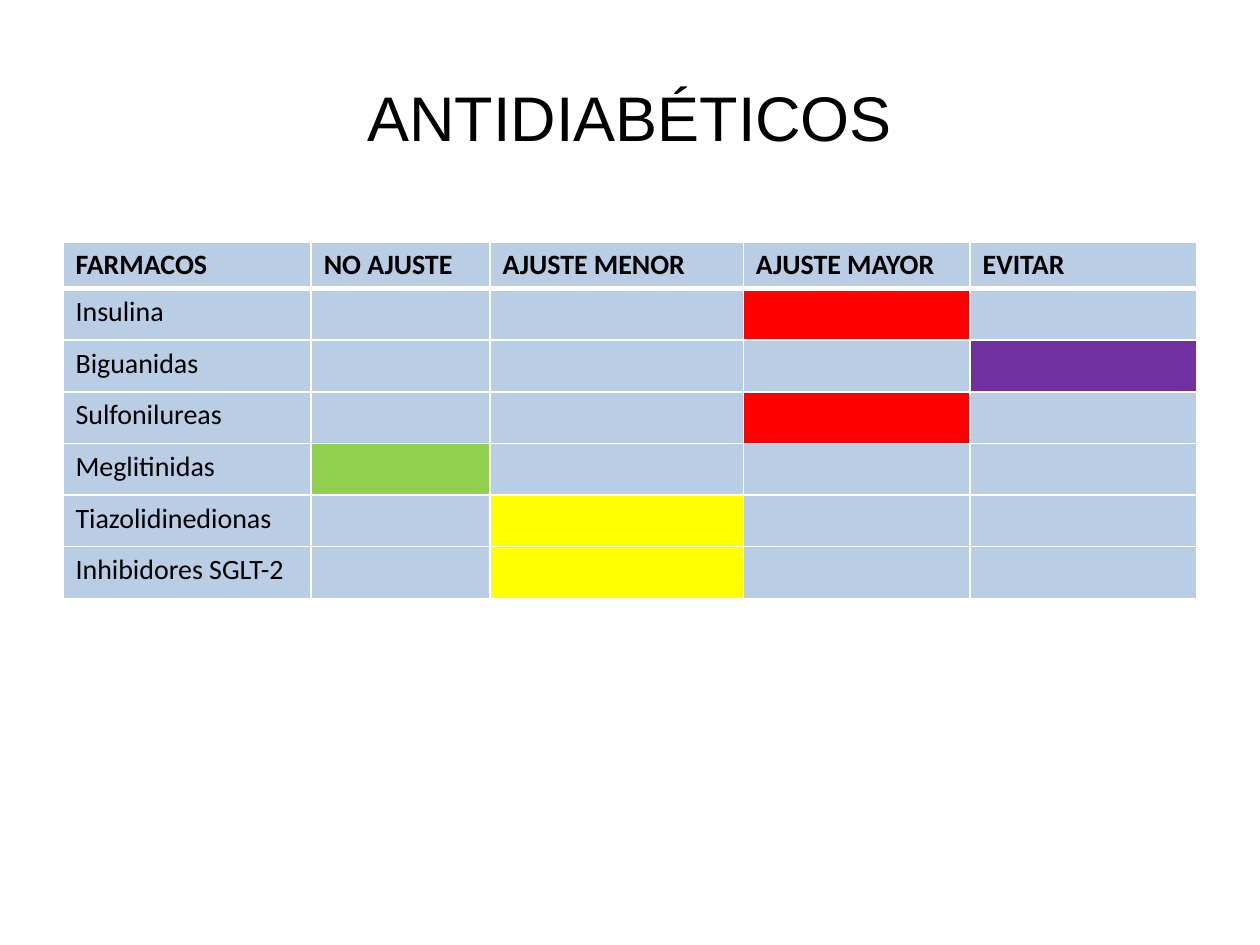
from lxml.etree import SubElement
from pptx import Presentation
from pptx.dml.color import RGBColor
from pptx.enum.text import MSO_ANCHOR, PP_ALIGN
from pptx.oxml.ns import qn
from pptx.util import Inches, Pt

BLACK = RGBColor(0x00, 0x00, 0x00)
WHITE = RGBColor(0xFF, 0xFF, 0xFF)
PALE_BLUE = RGBColor(0xB9, 0xCD, 0xE5)
GREEN = RGBColor(0x92, 0xD0, 0x50)
YELLOW = RGBColor(0xFF, 0xFF, 0x00)
RED = RGBColor(0xFF, 0x00, 0x00)
PURPLE = RGBColor(0x70, 0x30, 0xA0)

ADJUSTMENTS = {
    "NO AJUSTE": GREEN,
    "AJUSTE MENOR": YELLOW,
    "AJUSTE MAYOR": RED,
    "EVITAR": PURPLE,
}
DRUGS = {
    "Insulina": "AJUSTE MAYOR",
    "Biguanidas": "EVITAR",
    "Sulfonilureas": "AJUSTE MAYOR",
    "Meglitinidas": "NO AJUSTE",
    "Tiazolidinedionas": "AJUSTE MENOR",
    "Inhibidores SGLT-2": "AJUSTE MENOR",
}
COLUMN_WIDTHS = [1.97, 1.42, 2.01, 1.8, 1.8]
HEADER_HEIGHT, DRUG_HEIGHT = 0.37, 0.41


def add_run(paragraph, text, font_name, size, bold=False):
    run = paragraph.add_run()
    run.text = text
    run.font.name = font_name
    run.font.size = Pt(size)
    run.font.bold = bold
    run.font.color.rgb = BLACK


def add_title(slide, box, text):
    frame = slide.shapes.add_textbox(*box).text_frame
    frame.word_wrap = True
    frame.vertical_anchor = MSO_ANCHOR.MIDDLE
    heading = frame.paragraphs[0]
    heading.alignment = PP_ALIGN.CENTER
    add_run(heading, text, "Arial", 36)


def set_borders(cell, widths):
    properties = cell._tc.get_or_add_tcPr()
    for side, width in widths.items():
        line = SubElement(properties, qn(f"a:ln{side}"), w=str(Pt(width)))
        fill = SubElement(line, qn("a:solidFill"))
        SubElement(fill, qn("a:srgbClr"), val=str(WHITE))


def style_cell(cell, text, color, top, bottom, bold):
    set_borders(cell, {"L": 1, "R": 1, "T": top, "B": bottom})
    cell.fill.solid()
    cell.fill.fore_color.rgb = color
    if text:
        add_run(cell.text_frame.paragraphs[0], text, "Calibri", 16, bold)


def add_adjustment_table(slide, box):
    grid = slide.shapes.add_table(len(DRUGS) + 1, len(COLUMN_WIDTHS), *box).table
    for column, width in zip(grid.columns, COLUMN_WIDTHS):
        column.width = Inches(width)
    for index, row in enumerate(grid.rows):
        row.height = Inches(DRUG_HEIGHT if index else HEADER_HEIGHT)

    for column, heading in enumerate(["FARMACOS", *ADJUSTMENTS]):
        style_cell(grid.cell(0, column), heading, PALE_BLUE, 1, 3, True)
    for row, (drug, advice) in enumerate(DRUGS.items(), start=1):
        top = 3 if row == 1 else 1
        style_cell(grid.cell(row, 0), drug, PALE_BLUE, top, 1, False)
        for column, (level, color) in enumerate(ADJUSTMENTS.items(), start=1):
            shade = color if level == advice else PALE_BLUE
            style_cell(grid.cell(row, column), "", shade, top, 1, False)


def main():
    deck = Presentation()
    deck.slide_width, deck.slide_height = Inches(10), Inches(7.5)
    slide = deck.slides.add_slide(deck.slide_layouts[6])
    margin = int(deck.slide_width * 0.05)
    content_width = deck.slide_width - 2 * margin
    table_height = HEADER_HEIGHT + len(DRUGS) * DRUG_HEIGHT
    add_title(slide, (margin, Inches(0.3), content_width, Inches(1.25)), "ANTIDIABÉTICOS")
    add_adjustment_table(
        slide, (margin, Inches(1.92), content_width, Inches(table_height))
    )
    deck.save("out.pptx")


if __name__ == "__main__":
    main()
